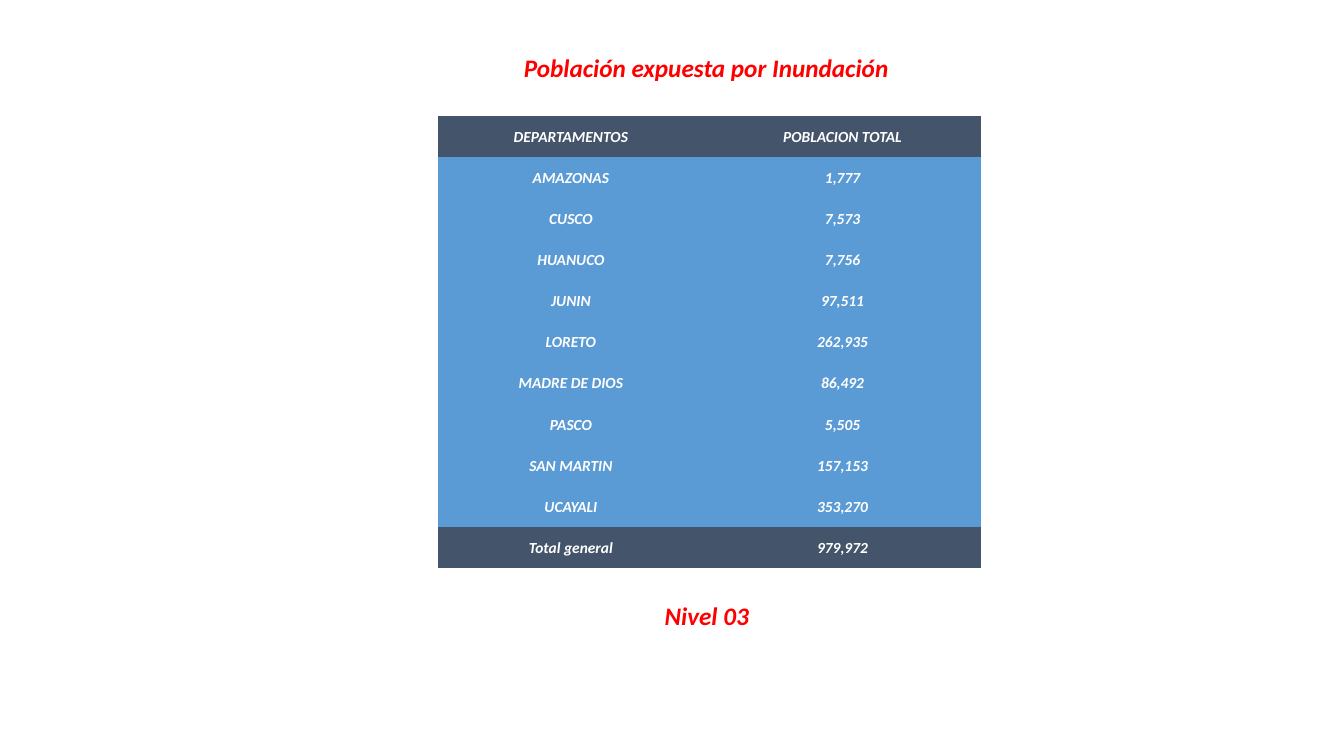
from pptx import Presentation
from pptx import util as u
from pptx.dml.color import RGBColor
from pptx.enum import text
from pptx.oxml.ns import qn

RED = RGBColor(0xFF, 0x00, 0x00)
WHITE = RGBColor(0xFF, 0xFF, 0xFF)
SLATE = RGBColor(0x44, 0x54, 0x6A)
BLUE = RGBColor(0x5B, 0x9B, 0xD5)
PLAIN_TABLE_STYLE = "{2D5ABB26-0587-4C30-8999-92F81FD0307C}"

POPULATION = {
    "AMAZONAS": 1777,
    "CUSCO": 7573,
    "HUANUCO": 7756,
    "JUNIN": 97511,
    "LORETO": 262935,
    "MADRE DE DIOS": 86492,
    "PASCO": 5505,
    "SAN MARTIN": 157153,
    "UCAYALI": 353270,
}


def write(frame, content, *, size, color, font="Calibri", bold=True, italic=True):
    """Write one centred paragraph into a text frame."""
    paragraph = frame.paragraphs[0]
    paragraph.alignment = text.PP_ALIGN.CENTER
    run = paragraph.add_run()
    run.text = content
    run.font.name = font
    run.font.size = u.Pt(size)
    run.font.bold = bold
    run.font.italic = italic
    run.font.color.rgb = color


class SlideBuilder:
    """Places elements by percentages of the slide's width and height."""

    heading_size = 18
    cell_size = 11
    cell_margin = u.Inches(0.01)

    def __init__(self, presentation):
        self.width = presentation.slide_width
        self.height = presentation.slide_height
        self.slide = presentation.slides.add_slide(presentation.slide_layouts[6])

    def across(self, percent):
        return round(self.width * percent / 100)

    def down(self, percent):
        return round(self.height * percent / 100)

    def heading(self, content, left, top, width, height, wrap):
        box = self.slide.shapes.add_textbox(
            self.across(left), self.down(top), self.across(width), self.down(height))
        frame = box.text_frame
        frame.word_wrap = wrap
        frame.auto_size = text.MSO_AUTO_SIZE.SHAPE_TO_FIT_TEXT
        write(frame, content, size=self.heading_size, color=RED)

    def table(self, rows, left, top, column_widths, row_height):
        shape = self.slide.shapes.add_table(
            len(rows), len(column_widths), self.across(left), self.down(top),
            self.across(sum(column_widths)), self.down(row_height * len(rows)))
        for style in shape.element.iter(qn("a:tableStyleId")):
            style.text = PLAIN_TABLE_STYLE
        table = shape.table
        table.horz_banding = False
        for column, width in zip(table.columns, column_widths):
            column.width = self.across(width)
        for index, (row, values) in enumerate(zip(table.rows, rows)):
            row.height = self.down(row_height)
            fill = SLATE if index in (0, len(rows) - 1) else BLUE
            for cell, value in zip(row.cells, values):
                self.fill_cell(cell, value, fill)

    def fill_cell(self, cell, value, fill):
        cell.fill.solid()
        cell.fill.fore_color.rgb = fill
        cell.vertical_anchor = text.MSO_ANCHOR.MIDDLE
        cell.margin_left = cell.margin_right = cell.margin_top = self.cell_margin
        cell.margin_bottom = 0
        write(cell.text_frame, value, size=self.cell_size, color=WHITE)


def main():
    presentation = Presentation()
    presentation.slide_width = u.Inches(13.33)
    presentation.slide_height = u.Inches(7.5)
    builder = SlideBuilder(presentation)

    # Title and level
    builder.heading("Población expuesta por Inundación", 38.11, 6.27, 28.88, 5.33, wrap=False)
    builder.heading("Nivel 03", 48.46, 78.8, 8.25, 5.33, wrap=True)

    # Population by department, with its total
    rows = [("DEPARTAMENTOS", "POBLACION TOTAL")]
    rows += [(name, f"{count:,}") for name, count in POPULATION.items()]
    rows.append(("Total general", f"{sum(POPULATION.values()):,}"))
    builder.table(rows, left=32.56, top=15.33, column_widths=(19.84, 20.59), row_height=5.44)

    presentation.save("out.pptx")


if __name__ == "__main__":
    main()
